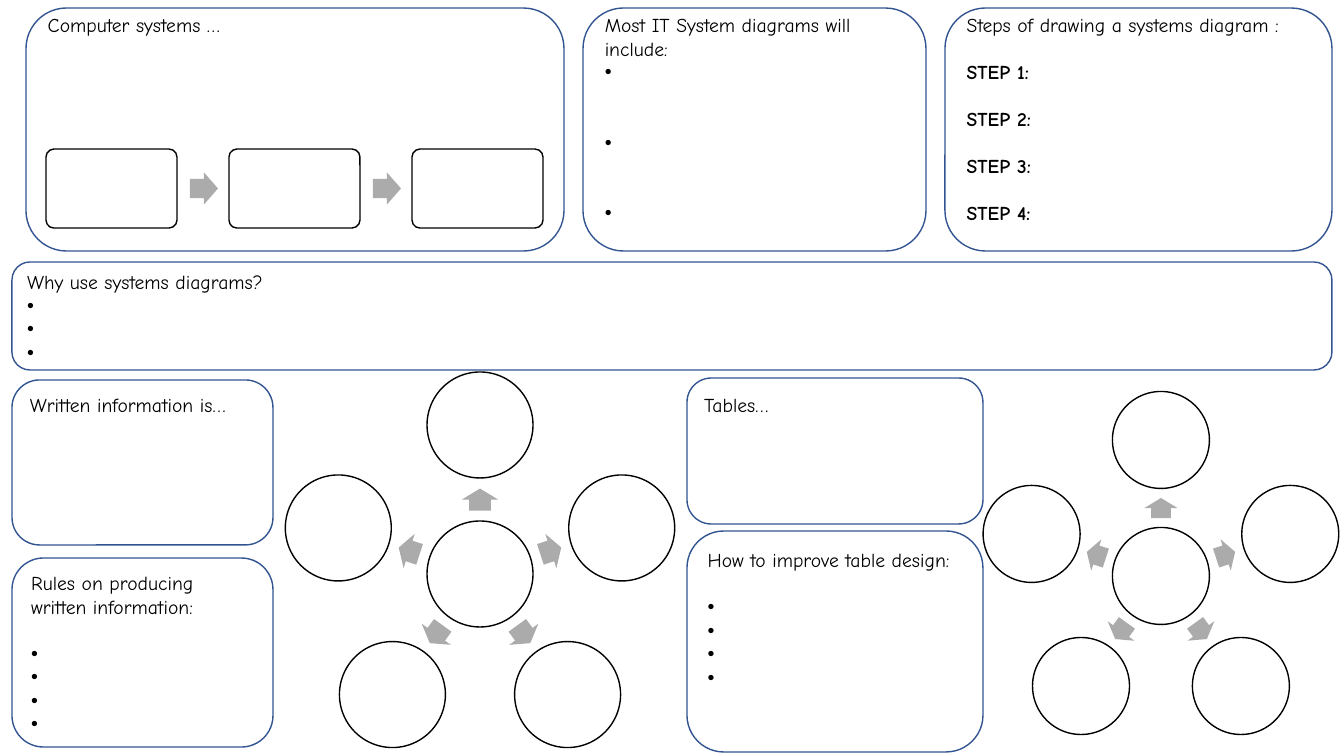
"""Build a fill-in worksheet slide about systems diagrams, written information and tables."""
from math import cos, radians, sin

from lxml.etree import SubElement
from pptx import Presentation
from pptx.dml.color import RGBColor
from pptx.enum.shapes import MSO_SHAPE
from pptx.enum.text import MSO_ANCHOR, PP_ALIGN
from pptx.oxml.ns import qn
from pptx.util import Pt

PX = 914400 / 100.8
COLORS = {"panel": "325491", "ink": "000000", "paper": "FFFFFF", "arrow": "ABABAB"}
FONT = "Comic Neue"
FONT_SIZE = 14
LINE = 16.8
INDENT = 31
CORNER = 0.16667

# Panels: (left, top, width, height), top of text, paragraphs.
# Paragraphs: kind, text, empty lines above.
BULLET = ("bullet", " ", 0)
SPACED_BULLET = ("bullet", " ", 2)
AFTER_GAP = ("bullet", " ", 1)
PANELS = [
    ((26, 8, 538, 243), 13, [("plain", "Computer systems …", 0)]),
    ((583, 8, 343, 243), 13, [
        ("plain", "Most IT System diagrams will include:", 0),
        BULLET, SPACED_BULLET, SPACED_BULLET]),
    ((945, 8, 387, 243), 13, [
        ("plain", "Steps of drawing a systems diagram :", 0),
        *[("bold", f"STEP {number}:", 1) for number in range(1, 5)]]),
    ((12, 262, 1320, 108), 270, [("plain", "Why use systems diagrams?", 0)] + [BULLET] * 3),
    ((12, 380, 261, 165), 393, [("plain", "Written information is…", 0)]),
    ((687, 378, 296, 146), 393, [("plain", "Tables…", 0)]),
    ((12, 558, 261, 189), 571, [
        ("plain", "Rules on producing written information:", 0), AFTER_GAP] + [BULLET] * 3),
    ((687, 531, 296, 221), 548, [
        ("plain", "How to improve table design:", 0), AFTER_GAP] + [BULLET] * 3),
]

FLOW = {"left": 46, "top": 149, "width": 131, "height": 79, "pitch": 183, "count": 3}
FLOW_ARROW = {"offset": 144, "width": 28, "height": 32}

# Wheels: center x, center y, circle diameter, orbit, arrow width, arrow height.
WHEELS = [(1161, 576, 97, 136, 20, 33), (480, 574, 106, 149, 22, 36)]
SPOKES = 5


def emu(pixels):
    return round(pixels * PX)


def color(name):
    return RGBColor.from_string(COLORS[name])


def add_box(shapes, kind, frame, fill=None, line=None):
    box = shapes.add_shape(kind, *map(emu, frame))
    box.shadow.inherit = False
    if fill:
        box.fill.solid()
        box.fill.fore_color.rgb = color(fill)
    else:
        box.fill.background()
    if line:
        box.line.color.rgb = color(line)
        box.line.width = Pt(1)
    else:
        box.line.fill.background()
    return box


def add_centered(shapes, kind, center, size, fill, line=None):
    (x, y), (width, height) = center, size
    return add_box(shapes, kind, (x - width / 2, y - height / 2, width, height), fill, line)


def add_arrow(shapes, center, size, angle=0):
    arrow = add_centered(shapes, MSO_SHAPE.RIGHT_ARROW, center, size, "arrow")
    arrow.adjustments[0] = 0.6
    arrow.adjustments[1] = 0.5
    arrow.rotation = angle


def add_bullet(para):
    properties = para._p.get_or_add_pPr()
    properties.set("marL", str(emu(INDENT)))
    properties.set("indent", str(-emu(INDENT)))
    SubElement(properties, qn("a:buFont"), typeface="Arial")
    SubElement(properties, qn("a:buChar"), char="•")


def add_panel(shapes, frame, text_top, paragraphs):
    box = add_box(shapes, MSO_SHAPE.ROUNDED_RECTANGLE, frame, line="panel")
    left, top, width, height = frame
    corner_inset = CORNER * min(width, height) * (1 - cos(radians(45)))
    text = box.text_frame
    text.word_wrap = True
    text.vertical_anchor = MSO_ANCHOR.TOP
    text.margin_top = emu(text_top - top - corner_inset)
    text.margin_bottom = 0
    for index, (kind, wording, gap) in enumerate(paragraphs):
        para = text.add_paragraph() if index else text.paragraphs[0]
        para.alignment = PP_ALIGN.LEFT
        para.line_spacing = Pt(LINE)
        para.space_before = Pt(gap * LINE)
        if kind == "bullet":
            add_bullet(para)
        para.font.name = FONT
        para.font.size = Pt(FONT_SIZE)
        para.font.bold = kind == "bold"
        para.font.color.rgb = color("ink")
        para.add_run().text = wording


def add_flow(shapes):
    middle = FLOW["top"] + FLOW["height"] / 2
    for index in range(FLOW["count"]):
        left = FLOW["left"] + index * FLOW["pitch"]
        frame = (left, FLOW["top"], FLOW["width"], FLOW["height"])
        box = add_box(shapes, MSO_SHAPE.ROUNDED_RECTANGLE, frame, "paper", "ink")
        box.adjustments[0] = 0.1
        if index < FLOW["count"] - 1:
            center = (left + FLOW_ARROW["offset"] + FLOW_ARROW["width"] / 2, middle)
            add_arrow(shapes, center, (FLOW_ARROW["width"], FLOW_ARROW["height"]))


def add_wheel(shapes, x, y, diameter, orbit, arrow_width, arrow_height):
    circle = (diameter, diameter)
    add_centered(shapes, MSO_SHAPE.OVAL, (x, y), circle, "paper", "ink")
    for spoke in range(SPOKES):
        angle = (270 + spoke * 360 / SPOKES) % 360
        across, down = orbit * cos(radians(angle)), orbit * sin(radians(angle))
        add_arrow(shapes, (x + across / 2, y + down / 2), (arrow_width, arrow_height), angle)
        add_centered(shapes, MSO_SHAPE.OVAL, (x + across, y + down), circle, "paper", "ink")


def main():
    deck = Presentation()
    deck.slide_width, deck.slide_height = emu(1344), emu(756)
    page = deck.slides.add_slide(deck.slide_layouts[6])
    for frame, text_top, paragraphs in PANELS:
        add_panel(page.shapes, frame, text_top, paragraphs)
    add_flow(page.shapes.add_group_shape().shapes)
    for wheel in WHEELS:
        add_wheel(page.shapes.add_group_shape().shapes, *wheel)
    deck.save("out.pptx")


if __name__ == "__main__":
    main()
